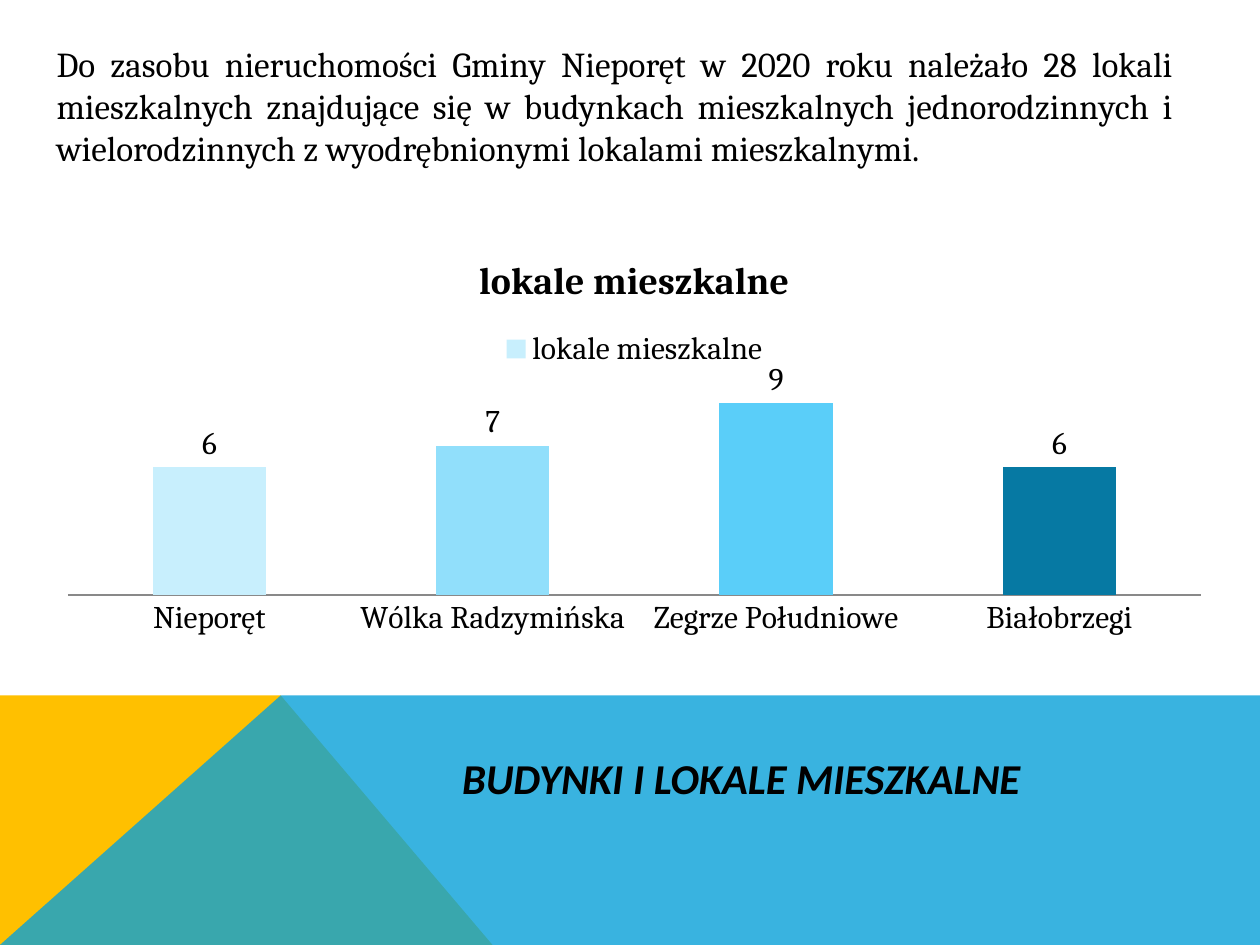
from lxml import etree
from pptx import Presentation
from pptx import util as u
from pptx.chart.data import CategoryChartData
from pptx.dml.color import RGBColor
from pptx.enum import chart as ch, text
from pptx.oxml.ns import qn

COLORS = {"text": "000000", "gold": "FFC000", "blue": "08A1D9", "axis": "898989"}
BARS = {
    "Nieporęt": (6, "C8EFFD"),
    "Wólka Radzymińska": (7, "91DFFB"),
    "Zegrze Południowe": (9, "5ACEF9"),
    "Białobrzegi": (6, "0679A3"),
}
INTRO = (
    "Do zasobu nieruchomości Gminy Nieporęt w 2020 roku należało 28 lokali "
    "mieszkalnych znajdujące się w budynkach mieszkalnych jednorodzinnych i "
    "wielorodzinnych z wyodrębnionymi lokalami mieszkalnymi."
)


def paint(fill, color):
    """Give a fill one solid colour."""
    fill.solid()
    fill.fore_color.rgb = RGBColor.from_string(color)


def style(font, size, name="Cambria", bold=False, italic=False):
    """Set the look of a font."""
    font.name, font.size, font.bold, font.italic = name, u.Pt(size), bold, italic
    font.color.rgb = RGBColor.from_string(COLORS["text"])


def write(tf, words, align, size, **look):
    """Write one formatted paragraph and return it."""
    p = tf.paragraphs[0]
    p.alignment = align
    r = p.add_run()
    r.text = words
    style(r.font, size, **look)
    return p


def add_polygon(s, points, color, alpha=None):
    """Draw a closed filled outline through points in centimetres."""
    pts = [(u.Cm(x), u.Cm(y)) for x, y in points]
    builder = s.shapes.build_freeform(*pts[0], scale=1.0)
    builder.add_line_segments(pts[1:], close=True)
    sp = builder.convert_to_shape()
    sp.shadow.inherit = False
    sp.line.fill.background()
    paint(sp.fill, color)
    if alpha:
        clr = sp.fill._xPr.find(qn("a:solidFill"))[0]
        etree.SubElement(clr, qn("a:alpha")).set("val", str(alpha * 1000))


def add_band(s, x, y, w, h):
    """Draw the gold and blue band at the foot of the slide."""
    peak, foot = x + 5.66, x + 9.93
    add_polygon(s, [(x, y + h), (x, y), (peak, y), (foot, y + h)], COLORS["gold"])
    add_polygon(s, [(x, y + h), (peak, y), (x + w, y), (x + w, y + h)],
                COLORS["blue"], alpha=80)


def add_title(s, x, y, w, h):
    """Place the title placeholder in front of the band."""
    sp = s.shapes.title
    sp.left, sp.top, sp.width, sp.height = map(u.Cm, (x, y, w, h))
    sp._element.getparent().append(sp._element)
    tf = sp.text_frame
    tf.auto_size = text.MSO_AUTO_SIZE.NONE
    tf.vertical_anchor = text.MSO_ANCHOR.TOP
    tf.margin_top = 0
    p = write(tf, "BUDYNKI I LOKALE MIESZKALNE", text.PP_ALIGN.CENTER, 24.3,
              name="Calibri", bold=True, italic=True)
    p.line_spacing = 0.85


def add_intro(s, x, y, w, h):
    """Place the justified introduction."""
    tf = s.shapes.add_textbox(*map(u.Cm, (x, y, w, h))).text_frame
    tf.word_wrap = True
    tf.auto_size = text.MSO_AUTO_SIZE.SHAPE_TO_FIT_TEXT
    write(tf, INTRO, text.PP_ALIGN.JUSTIFY, 20)


def add_flats_chart(s, x, y, w, h):
    """Place the column chart of flats by village."""
    data = CategoryChartData()
    data.categories = list(BARS)
    data.add_series("lokale mieszkalne", [value for value, _ in BARS.values()])
    chart = s.shapes.add_chart(ch.XL_CHART_TYPE.COLUMN_CLUSTERED,
                               *map(u.Cm, (x, y, w, h)), data).chart
    style(chart.font, 18)
    chart.has_title = True
    write(chart.chart_title.text_frame, "lokale mieszkalne",
          text.PP_ALIGN.CENTER, 21.6, bold=True)
    chart.has_legend = True
    chart.legend.position = ch.XL_LEGEND_POSITION.TOP
    chart.legend.include_in_layout = False

    axis = chart.category_axis
    axis.major_tick_mark = ch.XL_TICK_MARK.NONE
    axis.format.line.color.rgb = RGBColor.from_string(COLORS["axis"])
    chart.value_axis.visible = False
    chart.value_axis.has_major_gridlines = False
    chart.value_axis.minimum_scale = 0
    chart.value_axis.maximum_scale = 10

    plot = chart.plots[0]
    plot.gap_width, plot.overlap, plot.vary_by_categories = 150, -25, False
    plot.has_data_labels = True
    plot.data_labels.show_value = True
    plot.data_labels.position = ch.XL_LABEL_POSITION.OUTSIDE_END
    series = plot.series[0]
    colors = [color for _, color in BARS.values()]
    paint(series.format.fill, colors[0])
    for i, color in enumerate(colors[1:], 1):
        paint(series.points[i].format.fill, color)


def main():
    """Build the slide and save it."""
    prs = Presentation()
    prs.slide_width, prs.slide_height = u.Cm(25.4), u.Cm(19.05)
    s = prs.slides.add_slide(prs.slide_layouts[5])
    add_band(s, 0, 14.02, 25.4, 5.03)
    add_title(s, 4.5, 15.32, 20.88, 1.52)
    add_flats_chart(s, 0.89, 4.72, 23.8, 8.28)
    add_intro(s, 0.89, 0.74, 23.01, 2.82)
    prs.save("out.pptx")


if __name__ == "__main__":
    main()
